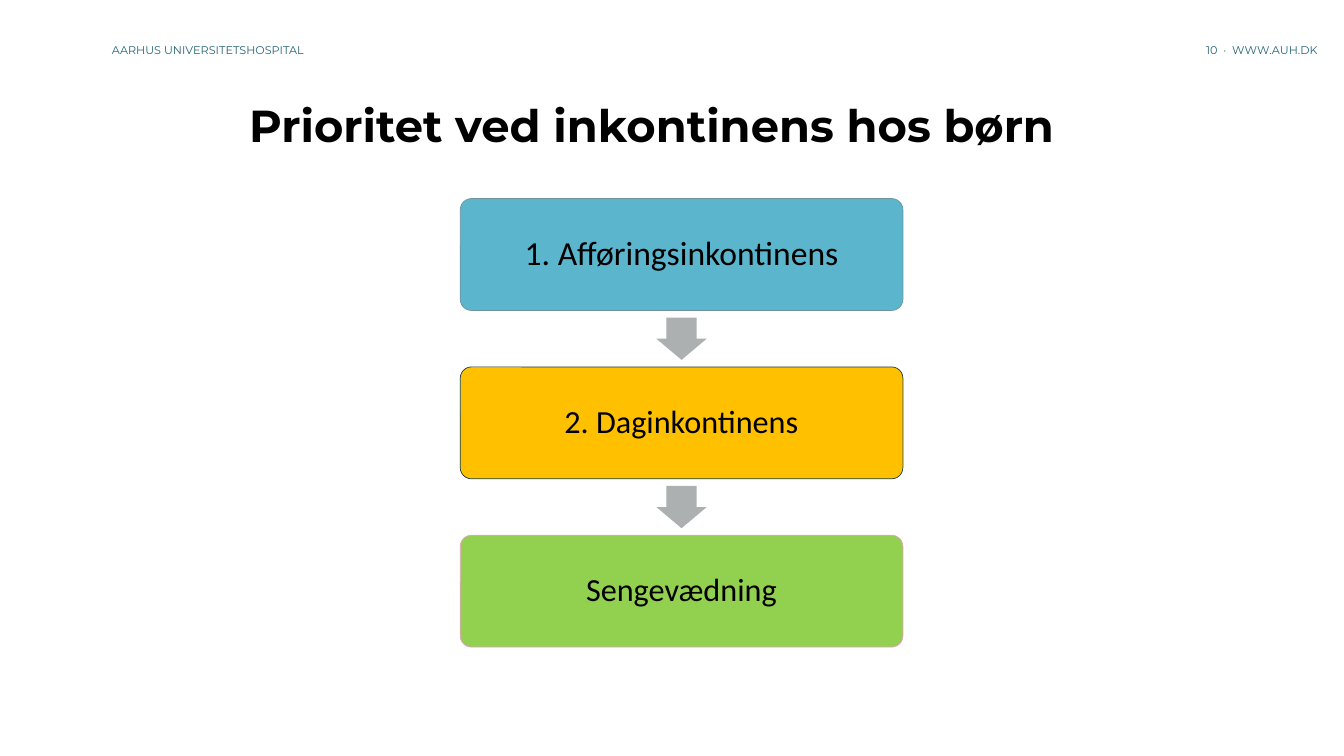
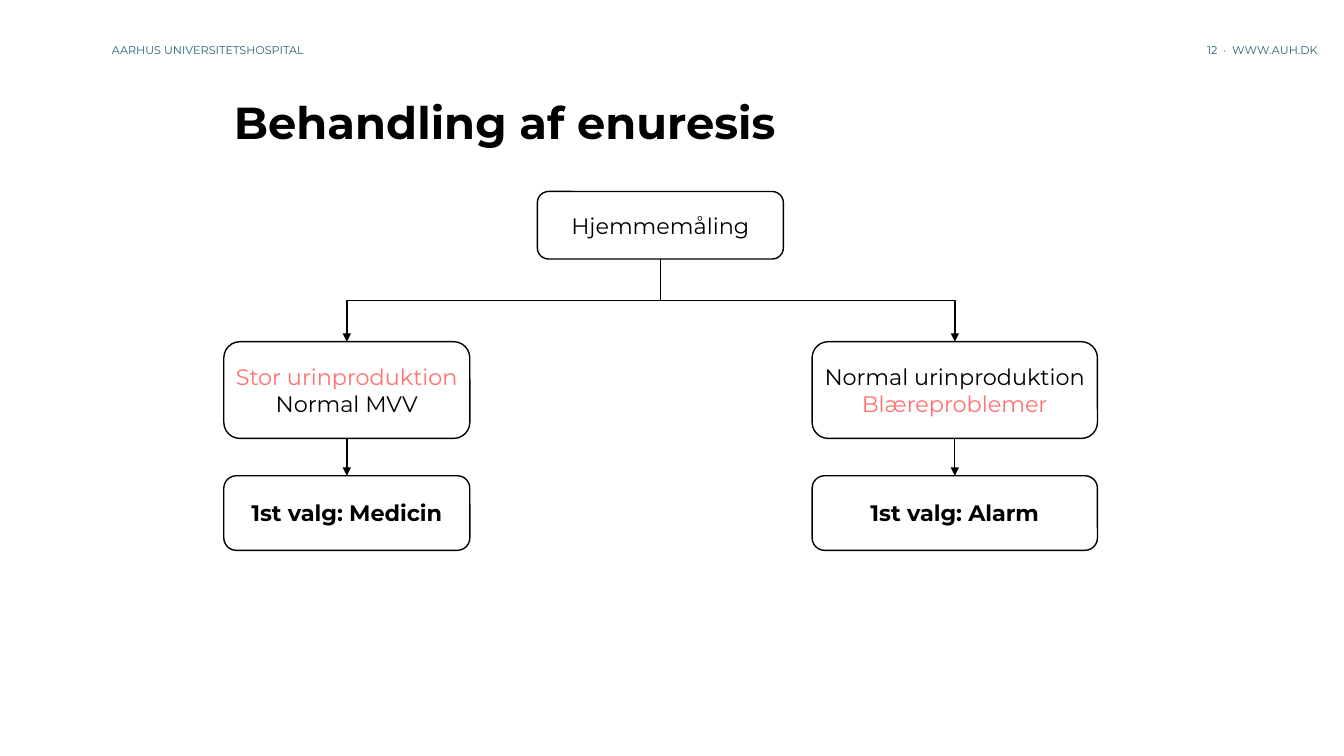
from lxml import etree
from pptx import Presentation
from pptx.dml.color import RGBColor
from pptx.enum.shapes import MSO_CONNECTOR, MSO_SHAPE
from pptx.enum.text import MSO_ANCHOR, MSO_AUTO_SIZE, PP_ALIGN
from pptx.oxml.ns import qn
from pptx.util import Inches, Pt

ROUND, DOWN = MSO_SHAPE.ROUNDED_RECTANGLE, MSO_SHAPE.DOWN_ARROW
STRAIGHT, ELBOW = MSO_CONNECTOR.STRAIGHT, MSO_CONNECTOR.ELBOW
LEFT, CENTER, RIGHT = PP_ALIGN.LEFT, PP_ALIGN.CENTER, PP_ALIGN.RIGHT
MIDDLE, BOTTOM = MSO_ANCHOR.MIDDLE, MSO_ANCHOR.BOTTOM

C = {"black": "000000", "teal": "246575", "coral": "FF7171", "gray": "ACB0B1",
     "blue": "5BB6CD", "yellow": "FFC000", "green": "92D050",
     "blue_edge": "6F929D", "yellow_edge": "174049", "green_edge": "E8A2C1"}
FONT = "Montserrat"
W, H = 13.33, 7.5

prs = Presentation()
prs.slide_width, prs.slide_height = Inches(W), Inches(H)


def write(sp, lines, size, align=CENTER, anchor=MIDDLE, font=FONT, bold=False,
          inset=0.1, wrap=True):
    tf = sp.text_frame
    tf.text = "\n".join(text for text, color in lines)
    tf.word_wrap, tf.auto_size = wrap, MSO_AUTO_SIZE.NONE
    tf.vertical_anchor = anchor
    tf.margin_left = tf.margin_right = Inches(inset)
    tf.margin_top = tf.margin_bottom = Inches(inset / 2)
    for p, (text, color) in zip(tf.paragraphs, lines):
        p.alignment = align
        for r in p.runs:
            r.font.name, r.font.size, r.font.bold = font, Pt(size), bold
            r.font.color.rgb = RGBColor.from_string(C[color])


def add_box(s, kind, center, top, width, height, fill=None, edge=None, weight=1):
    sp = s.shapes.add_shape(kind, Inches(center - width / 2), Inches(top),
                            Inches(width), Inches(height))
    sp.shadow.inherit = False
    if fill:
        sp.fill.solid()
        sp.fill.fore_color.rgb = RGBColor.from_string(C[fill])
    else:
        sp.fill.background()
    if edge:
        sp.line.color.rgb = RGBColor.from_string(C[edge])
        sp.line.width = Pt(weight)
    else:
        sp.line.fill.background()
    return sp


slides = []
for number, title, place in [
        (10, "Prioritet ved inkontinens hos børn", (2.37, 0.64, 8.96, 1.19)),
        (12, "Behandling af enuresis", (2.22, 0.89, 7.56, 0.64))]:
    s = prs.slides.add_slide(prs.slide_layouts[5])
    sp = s.shapes.title
    sp.left, sp.top, sp.width, sp.height = [Inches(v) for v in place]
    write(sp, [(title, "black")], 32, LEFT, bold=True)
    for left, width, text, align in [
            (1.11, 4.45, "AARHUS UNIVERSITETSHOSPITAL", LEFT),
            (9.68, 3.39, f"{number}  ·  WWW.AUH.DK", RIGHT)]:
        sp = s.shapes.add_textbox(Inches(left), 0, Inches(width), Inches(0.56))
        write(sp, [(text, "teal")], 8, align, BOTTOM, inset=0)
    slides.append(s)

s = slides[0]
middle, first_top, step_h, gap = 6.76, 1.97, 1.11, 0.56
arrow_w, arrow_h = 0.5, 0.42
steps = [("1. Afføringsinkontinens", "blue", 24),
         ("2. Daginkontinens", "yellow", 23),
         ("Sengevædning", "green", 23)]
for i, (text, color, size) in enumerate(steps):
    top = first_top + i * (step_h + gap)
    sp = add_box(s, ROUND, middle, top, 4.39, step_h, color, color + "_edge", 0.5)
    sp.adjustments[0] = 0.1
    write(sp, [(text, "black")], size, font="Calibri")
    sp.text_frame.paragraphs[0].line_spacing = 0.9
    if i:
        sp = add_box(s, DOWN, middle, top - (gap + arrow_h) / 2, arrow_w, arrow_h, "gray")
        sp.adjustments[0], sp.adjustments[1] = 0.6, 0.5

s = slides[1]
hub, hub_top, hub_h = 6.55, 1.9, 0.67
finding_top, finding_h = 3.39, 0.96
choice_top, choice_h = 4.72, 0.74
hub_bottom = hub_top + hub_h
drop = finding_top - hub_bottom

sp = add_box(s, ROUND, hub, hub_top, 2.44, hub_h, edge="black")
write(sp, [("Hjemmemåling", "black")], 16, wrap=False)

branches = [
    (3.44, 2.44, -1, [("Stor urinproduktion", "coral"), ("Normal MVV", "black")],
     "1st valg: Medicin"),
    (9.47, 2.83, 1, [("Normal urinproduktion", "black"), ("Blæreproblemer", "coral")],
     "1st valg: Alarm")]
arrows = []
for center, width, side, finding, choice in branches:
    upper = add_box(s, ROUND, center, finding_top, width, finding_h, edge="black")
    write(upper, finding, 16, wrap=False)
    lower = add_box(s, ROUND, center, choice_top, width, choice_h, edge="black")
    write(lower, [(choice, "black")], 16, bold=True, wrap=False)

    x, y = (hub + center) / 2, hub_bottom + drop / 2
    dx, dy = side * drop / 2, abs(center - hub) / 2
    elbow = s.shapes.add_connector(ELBOW, Inches(x + dx), Inches(y - dy),
                                   Inches(x - dx), Inches(y + dy))
    turn = 90 if side < 0 else 270
    elbow._element.spPr.find(qn("a:xfrm")).set("rot", str(turn * 60000))

    link = s.shapes.add_connector(STRAIGHT, 0, 0, 0, 0)
    link.begin_connect(upper, 2)
    link.end_connect(lower, 0)
    arrows += [elbow, link]

for arrow in arrows:
    arrow.line.color.rgb = RGBColor.from_string(C["black"])
    arrow.line.width = Pt(1)
    etree.SubElement(arrow.line._get_or_add_ln(), qn("a:tailEnd"), type="triangle")
    etree.SubElement(arrow._element.spPr, qn("a:effectLst"))

prs.save("out.pptx")
